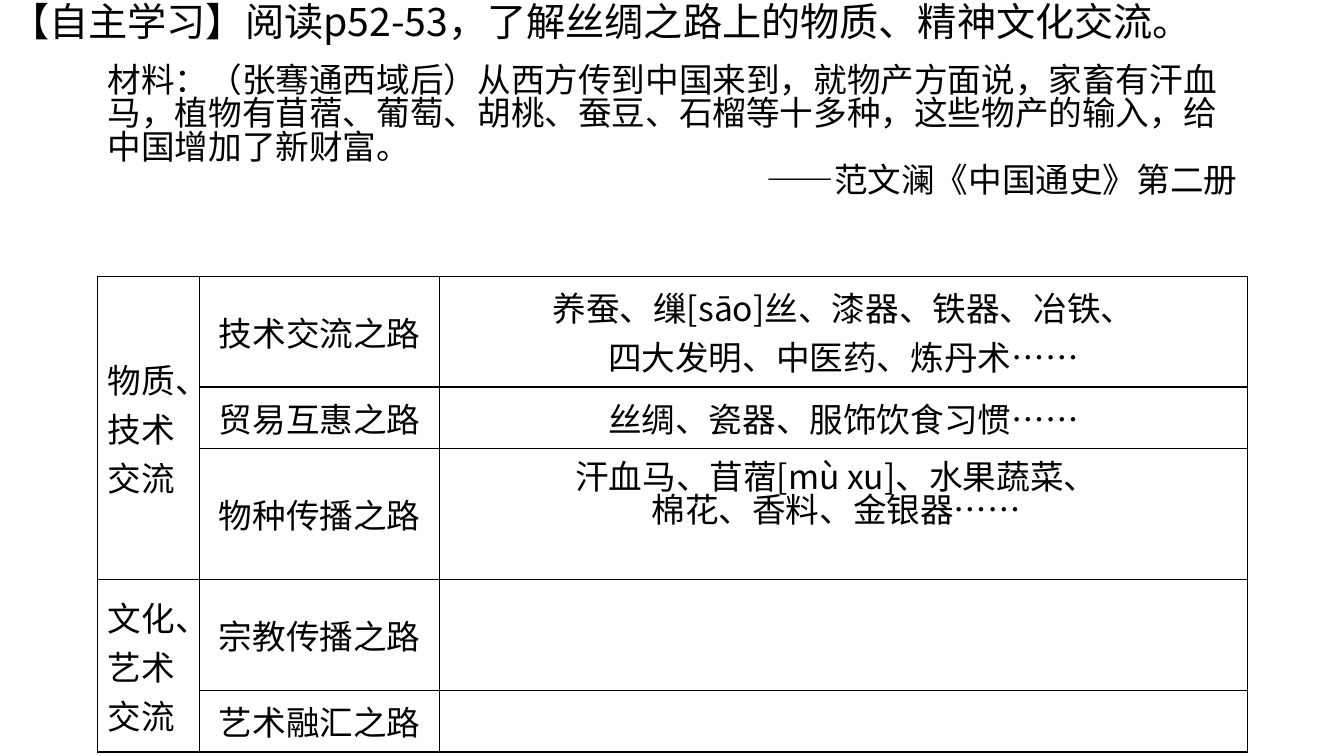
import pptx
import pptx.util
import pptx.dml.color
import pptx.enum.text
import pptx.oxml.ns
from lxml import etree

Inches, Pt = pptx.util.Inches, pptx.util.Pt
Align = pptx.enum.text.PP_ALIGN
Anchor = pptx.enum.text.MSO_ANCHOR
Fit = pptx.enum.text.MSO_AUTO_SIZE
qn = pptx.oxml.ns.qn


class Theme:
    face = "Noto Sans CJK SC"
    ink = "000000"
    paper = "FFFFFF"
    head = 28
    body = 24
    line = 1
    tight = 0.83  # line spacing outside the table


def color(code):
    return pptx.dml.color.RGBColor.from_string(code)


def apply(target, values):
    for name, value in values.items():
        setattr(target, name, value)


class Page:
    def __init__(self, deck, theme):
        self.theme = theme
        self.slide = deck.slides.add_slide(deck.slide_layouts[5])

    def put(self, frame, lines, size, space=1.0):
        """Fill a frame with (text, alignment) paragraphs."""
        for i, (text, align) in enumerate(lines):
            para = frame.add_paragraph() if i else frame.paragraphs[0]
            apply(para, {"alignment": align, "line_spacing": space,
                         "space_before": Pt(0)})
            run = para.add_run()
            run.text = text
            apply(run.font, {"name": self.theme.face, "size": Pt(size)})
            run.font.color.rgb = color(self.theme.ink)
            east = etree.SubElement(run.font._element, qn("a:ea"))
            east.set("typeface", self.theme.face)

    def title(self, text, left, top, width, height):
        shape = self.slide.shapes.title
        apply(shape, {"left": Inches(left), "top": Inches(top),
                      "width": Inches(width), "height": Inches(height)})
        shape.fill.solid()
        shape.fill.fore_color.rgb = color(self.theme.paper)
        apply(shape.text_frame, {"word_wrap": True, "auto_size": Fit.NONE,
                                 "vertical_anchor": Anchor.TOP,
                                 "margin_right": 0})
        self.put(shape.text_frame, [(text, Align.LEFT)],
                 self.theme.head, self.theme.tight)

    def text(self, lines, left, top, width, height):
        box = self.slide.shapes.add_textbox(
            Inches(left), Inches(top), Inches(width), Inches(height))
        apply(box.text_frame, {"word_wrap": True,
                               "auto_size": Fit.SHAPE_TO_FIT_TEXT})
        self.put(box.text_frame, lines, self.theme.body, self.theme.tight)

    def border(self, cell):
        props = cell._tc.get_or_add_tcPr()
        for side in ("lnL", "lnR", "lnT", "lnB"):
            line = etree.SubElement(props, qn("a:" + side))
            line.set("w", str(Pt(self.theme.line)))
            fill = etree.SubElement(line, qn("a:solidFill"))
            etree.SubElement(fill, qn("a:srgbClr")).set("val", self.theme.ink)

    def table(self, groups, left, top, cols, rows):
        """Each group is a label and its (route, goods) rows."""
        grid = self.slide.shapes.add_table(
            len(rows), len(cols), Inches(left), Inches(top),
            Inches(sum(cols)), Inches(sum(rows))).table
        apply(grid, {"first_row": False, "horz_banding": False})
        for col, width in zip(grid.columns, cols):
            col.width = Inches(width)
        for row, height in zip(grid.rows, rows):
            row.height = Inches(height)
        for cell in grid.iter_cells():
            self.border(cell)
            cell.fill.background()
            cell.vertical_anchor = Anchor.MIDDLE

        size = self.theme.body
        row = 0
        for label, routes in groups:
            first = grid.cell(row, 0)
            first.merge(grid.cell(row + len(routes) - 1, 0))
            self.put(first.text_frame, [(label, Align.LEFT)], size)
            for route, goods in routes:
                for col, lines in ((1, [route]), (2, goods)):
                    self.put(grid.cell(row, col).text_frame,
                             [(t, Align.CENTER) for t in lines], size)
                row += 1


def main():
    deck = pptx.Presentation()
    apply(deck, {"slide_width": Inches(13.33), "slide_height": Inches(7.5)})
    page = Page(deck, Theme)

    # Heading
    page.title("【自主学习】阅读p52-53，了解丝绸之路上的物质、精神文化交流。",
               0, 0, 12.05, 0.57)

    # Quoted passage and its source
    page.text([
        ("材料：（张骞通西域后）从西方传到中国来到，就物产方面说，家畜有汗血马，"
         "植物有苜蓿、葡萄、胡桃、蚕豆、石榴等十多种，这些物产的输入，"
         "给中国增加了新财富。", Align.LEFT),
        ("——范文澜《中国通史》第二册", Align.RIGHT),
    ], 0.97, 0.6, 11.4, 1.72)

    # Exchange table
    page.table([
        ("物质、技术交流", [
            ("技术交流之路", ["养蚕、缫[sāo]丝、漆器、铁器、冶铁、",
                        "四大发明、中医药、炼丹术……"]),
            ("贸易互惠之路", ["丝绸、瓷器、服饰饮食习惯……"]),
            ("物种传播之路", []),
        ]),
        ("文化、艺术交流", [
            ("宗教传播之路", []),
            ("艺术融汇之路", []),
        ]),
    ], 0.97, 2.74, [1.01, 2.38, 8.01], [1.1, 0.61, 1.3, 1.1, 0.61])

    # Answer laid over the species row
    page.text([("汗血马、苜蓿[mù xu]、水果蔬菜、", Align.CENTER),
               ("棉花、香料、金银器……", Align.CENTER)],
              4.93, 4.54, 6.73, 0.91)

    deck.save("out.pptx")


if __name__ == "__main__":
    main()
